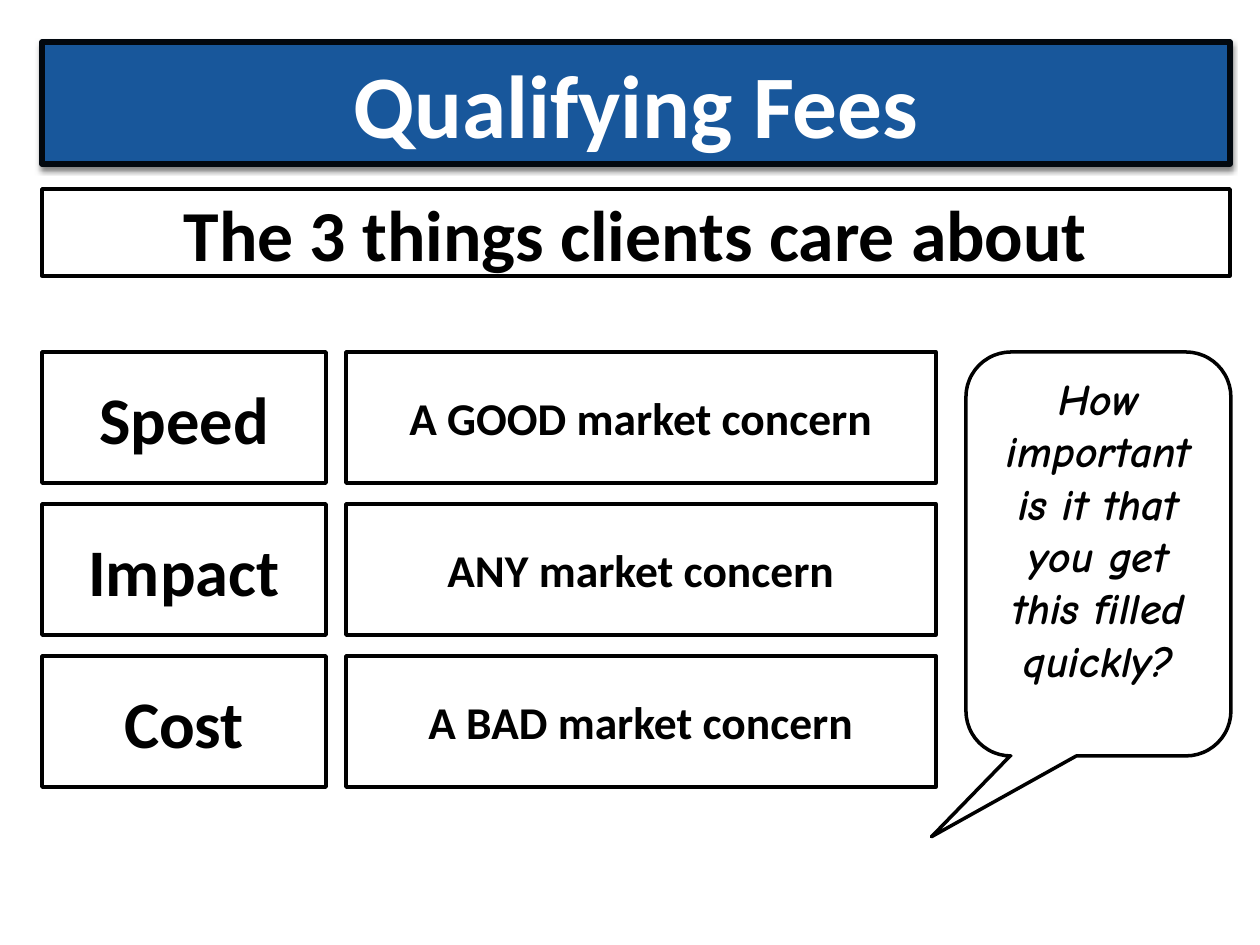
from lxml.etree import SubElement
from pptx import Presentation
from pptx.dml.color import RGBColor
from pptx.enum.shapes import MSO_SHAPE as Shape
from pptx.enum.text import MSO_ANCHOR as Anchor, MSO_AUTO_SIZE as AutoSize, PP_ALIGN as Align
from pptx.oxml.ns import qn
from pptx.util import Pt

EMU_PER_PX = 914400 / 126


def px(n):
    return round(n * EMU_PER_PX)


def rgb(color):
    return RGBColor.from_string(color)


class Deck:
    font = "Calibri"
    ink = "000000"
    paper = "FFFFFF"

    def __init__(self, prs):
        self.s = prs.slides.add_slide(prs.slide_layouts[5])

    def style(self, sp, fill, line, width):
        sp.shadow.inherit = False
        sp.fill.solid()
        sp.fill.fore_color.rgb = rgb(fill)
        sp.line.color.rgb = rgb(line)
        sp.line.width = Pt(width)

    def label(self, sp, text, size, color, font=None, italic=None, anchor=Anchor.MIDDLE):
        tf = sp.text_frame
        tf.word_wrap = True
        tf.auto_size = AutoSize.NONE
        tf.vertical_anchor = anchor
        p = tf.paragraphs[0]
        p.alignment = Align.CENTER
        r = p.add_run()
        r.text = text
        r.font.name = font or self.font
        r.font.size = Pt(size)
        r.font.bold = True
        r.font.italic = italic
        r.font.color.rgb = rgb(color)

    def cast_shadow(self, sp, blur, dist):
        effects = sp.element.spPr.find(qn("a:effectLst"))
        shadow = SubElement(effects, qn("a:outerShdw"), blurRad=str(Pt(blur)),
                            dist=str(Pt(dist)), dir="5400000", rotWithShape="0")
        color = SubElement(shadow, qn("a:srgbClr"), val=self.ink)
        SubElement(color, qn("a:alpha"), val="50000")

    def title(self, x, y, w, h, text, size):
        sp = self.s.shapes.title
        sp.left, sp.top, sp.width, sp.height = map(px, (x, y, w, h))
        self.style(sp, "18579B", "02080F", 3)
        self.cast_shadow(sp, 3, 2)
        self.label(sp, text, size, self.paper)

    def box(self, x, y, w, h, text, size):
        sp = self.s.shapes.add_shape(Shape.RECTANGLE, *map(px, (x, y, w, h)))
        self.style(sp, self.paper, self.ink, 2)
        self.label(sp, text, size, self.ink)

    def callout(self, x, y, w, h, text, size, adjustments):
        sp = self.s.shapes.add_shape(Shape.ROUNDED_RECTANGULAR_CALLOUT, *map(px, (x, y, w, h)))
        for i, value in enumerate(adjustments):
            sp.adjustments[i] = value
        self.style(sp, self.paper, self.ink, 2)
        self.label(sp, text, size, self.ink, "Comic Neue", True, Anchor.TOP)


def main():
    prs = Presentation()
    prs.slide_width, prs.slide_height = px(1260), px(945)
    deck = Deck(prs)

    left, width, top = 42, 1188, 352
    deck.title(left, 42, width, 122, "Qualifying Fees", 51)
    deck.box(left, 189, width, 87, "The 3 things clients care about", 41)

    row_h, row_step = 131, 152
    concerns = [
        ("Speed", "A GOOD market concern"),
        ("Impact", "ANY market concern"),
        ("Cost", "A BAD market concern"),
    ]
    for i, (name, concern) in enumerate(concerns):
        y = top + i * row_step
        deck.box(left, y, 284, row_h, name, 38)
        deck.box(346, y, 590, row_h, concern, 26)

    deck.callout(966, top, 265, 404, "How important is it that you get this filled quickly?",
                 25, (-0.63, 0.7, 0.17))
    prs.save("out.pptx")


if __name__ == "__main__":
    main()
